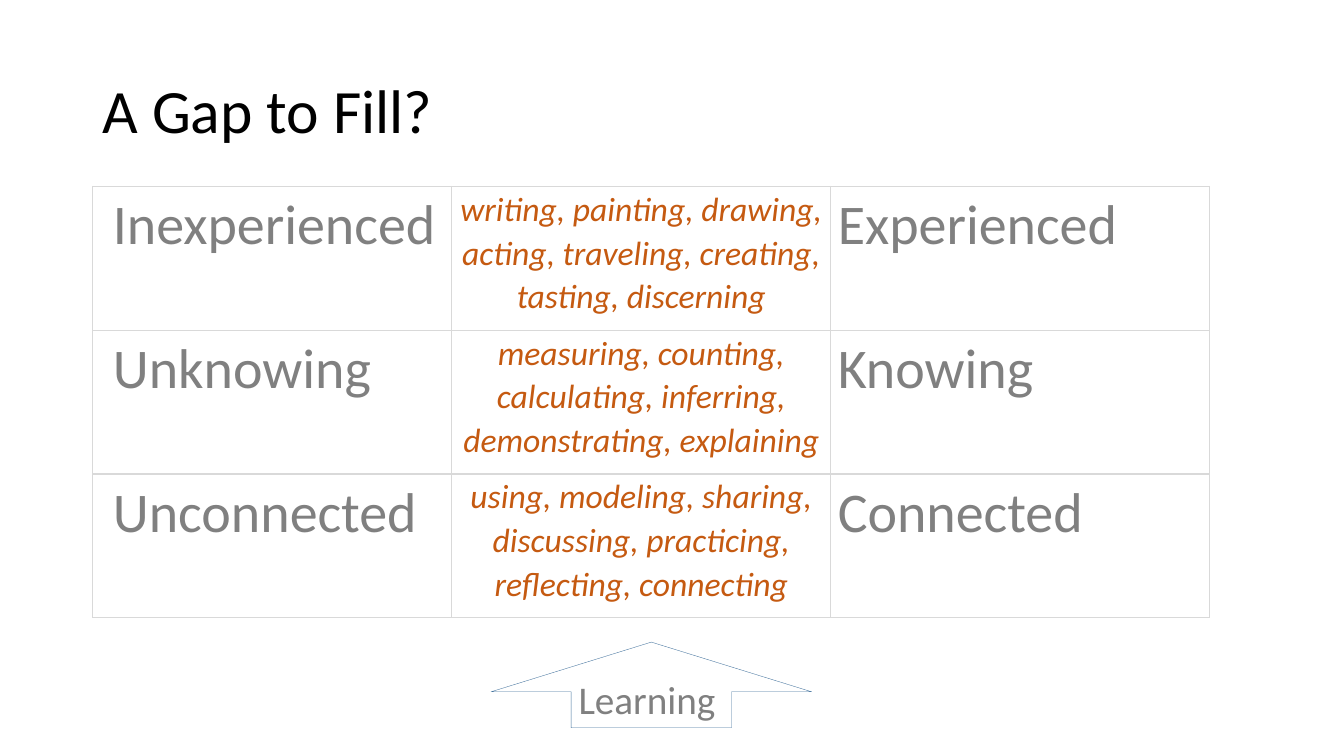
"""Build the slide about the gap that learning fills."""
from dataclasses import dataclass

from lxml import etree
from pptx import Presentation
from pptx.dml.color import RGBColor
from pptx.enum.shapes import MSO_SHAPE
from pptx.enum.text import MSO_ANCHOR, PP_ALIGN
from pptx.oxml.ns import qn
from pptx.util import Pt

UP_ARROW = MSO_SHAPE.UP_ARROW
TOP, MIDDLE = MSO_ANCHOR.TOP, MSO_ANCHOR.MIDDLE
LEFT, CENTER = PP_ALIGN.LEFT, PP_ALIGN.CENTER
SCALE = 9144


@dataclass(frozen=True)
class Theme:
    """Hold the colours and type sizes."""
    font: str = "Calibri"
    ink: str = "000000"
    gray: str = "808080"
    rust: str = "C55A11"
    grid: str = "D9D9D9"
    edge: str = "43739E"
    head: int = 44
    state: int = 40
    verbs: int = 24
    label: int = 28


THEME = Theme()
WIDTHS = (356, 376, 376)
STYLES = (
    dict(size=THEME.state, color=THEME.gray, inset=20),
    dict(size=THEME.verbs, color=THEME.rust, italic=True, align=CENTER),
    dict(size=THEME.state, color=THEME.gray),
)
ROWS = (
    ("Inexperienced",
     "writing, painting, drawing, acting, traveling, creating, tasting, discerning",
     "Experienced"),
    ("Unknowing",
     "measuring, counting, calculating, inferring, demonstrating, explaining",
     "Knowing"),
    ("Unconnected",
     "using, modeling, sharing, discussing, practicing, reflecting, connecting",
     "Connected"),
)


def px(*sizes):
    """Turn px lengths into EMU."""
    return [size * SCALE for size in sizes]


def assign(target, values):
    """Set each named attribute on the target."""
    for name, value in values.items():
        setattr(target, name, value)


def write(frame, text, size, color, italic=False, align=LEFT, space=1.0):
    """Put one styled paragraph into a text frame."""
    para = frame.paragraphs[0]
    assign(para, dict(alignment=align, line_spacing=space))
    run = para.add_run()
    run.text = text
    assign(run.font, dict(name=THEME.font, size=Pt(size), italic=italic))
    run.font.color.rgb = RGBColor.from_string(color)


def add_text(slide, box, text, size, color, anchor=TOP, space=1.0):
    """Place a text box that fills the given box."""
    frame = slide.shapes.add_textbox(*px(*box)).text_frame
    assign(frame, dict(word_wrap=True, vertical_anchor=anchor))
    write(frame, text, size, color, space=space)


def add_edges(cell):
    """Draw a thin line on all four sides of a cell."""
    props = cell._tc.get_or_add_tcPr()
    for side in ("lnL", "lnR", "lnT", "lnB"):
        line = etree.SubElement(props, qn(f"a:{side}"), w=str(Pt(1)))
        fill = etree.SubElement(line, qn("a:solidFill"))
        etree.SubElement(fill, qn("a:srgbClr"), val=THEME.grid)


def fill_cell(cell, text, inset=7, **style):
    """Write and format one table cell."""
    left, right = px(inset, 7)
    assign(cell, dict(margin_left=left, margin_right=right, margin_top=0,
                      margin_bottom=0, vertical_anchor=TOP))
    add_edges(cell)
    cell.fill.background()
    write(cell.text_frame, text, space=1.07, **style)


def add_grid(slide, box):
    """Place the table of states and the verbs between them."""
    frame = slide.shapes.add_table(len(ROWS), len(WIDTHS), *px(*box))
    table = frame.table
    assign(table, dict(first_row=False, horz_banding=False))
    for column, width in zip(table.columns, px(*WIDTHS)):
        column.width = width
    for r, row in enumerate(ROWS):
        for c, (text, style) in enumerate(zip(row, STYLES)):
            fill_cell(table.cell(r, c), text, **style)


def add_arrow(slide, box):
    """Place the outlined arrow with its label in the stem."""
    x, y, width, height = box
    arrow = slide.shapes.add_shape(UP_ARROW, *px(*box))
    arrow.shadow.inherit = False
    arrow.adjustments[0] = 0.5
    arrow.adjustments[1] = 0.58
    arrow.fill.background()
    arrow.line.width = Pt(0.25)
    arrow.line.color.rgb = RGBColor.from_string(THEME.edge)
    stem = (x + width // 4 - 2, y + 28, 164, height - 28)
    add_text(slide, stem, "Learning", THEME.label, THEME.gray)


def main():
    """Build and save the slide."""
    deck = Presentation()
    width, height = px(1333, 750)
    assign(deck, dict(slide_width=width, slide_height=height))
    slide = deck.slides.add_slide(deck.slide_layouts[6])
    add_text(slide, (92, 40, 1150, 145), "A Gap to Fill?",
             THEME.head, THEME.ink, MIDDLE, 0.9)
    add_grid(slide, (92, 185, sum(WIDTHS), 428))
    add_arrow(slide, (487, 637, 318, 85))
    deck.save("out.pptx")


if __name__ == "__main__":
    main()
